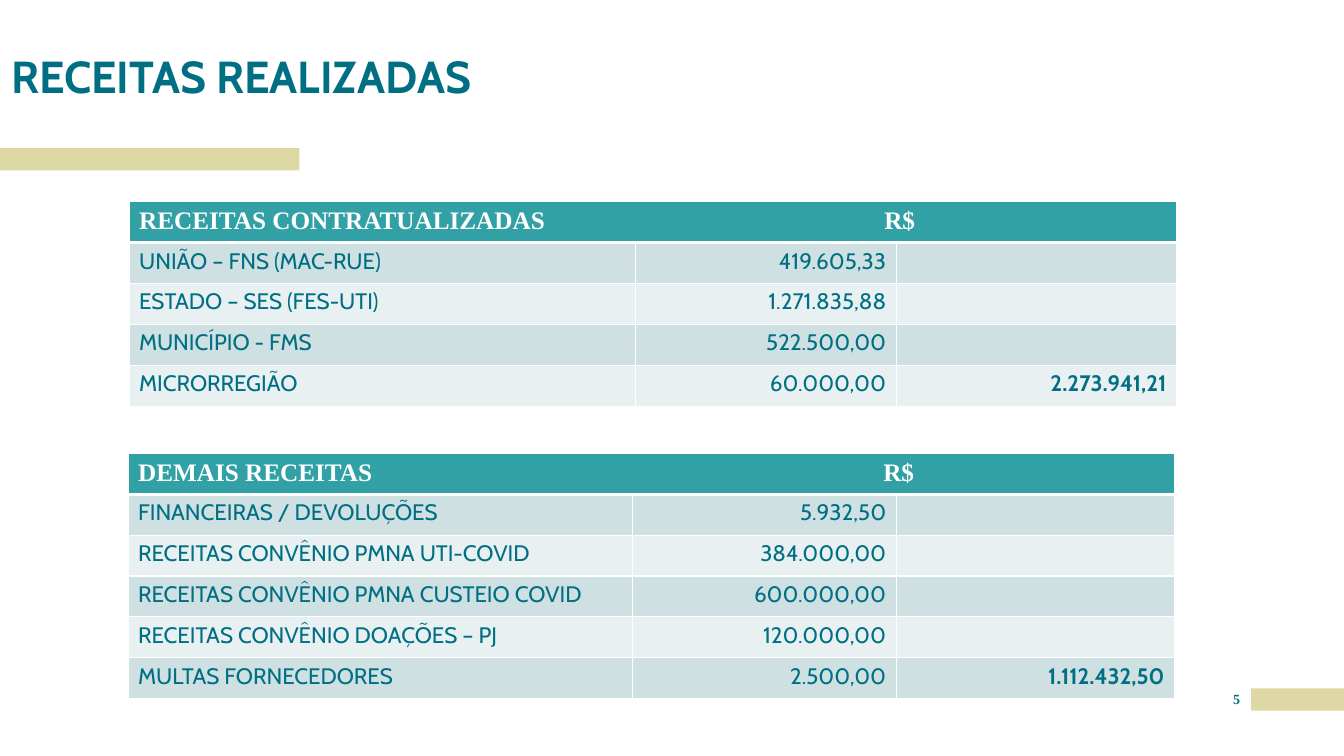
from dataclasses import dataclass

from lxml import etree
from pptx import Presentation
from pptx import util as u
from pptx.dml import color
from pptx.enum import shapes, text
from pptx.oxml import ns

COLORS = {
    "teal": "006F83",
    "header": "32A1A6",
    "odd_row": "CEE0E1",
    "even_row": "E8F0F1",
    "sand": "DED8A4",
    "white": "FFFFFF",
}
TITLE_FORMAT = {"name": "Cabin", "size": u.Pt(32), "bold": True}
HEADER_FORMAT = {"name": "Times New Roman", "size": u.Pt(18), "bold": True}
BODY_FORMAT = {"name": "Cabin", "size": u.Pt(16), "bold": False}
TOTAL_FORMAT = {**BODY_FORMAT, "bold": True}
NUMBER_FORMAT = {"name": "Times New Roman", "size": u.Pt(10), "bold": True}
NO_MARGINS = {f"margin_{side}": 0 for side in ("left", "top", "right", "bottom")}


@dataclass
class Bar:
    left: float
    top: float
    width: float
    height: float = 0.22


@dataclass
class RevenueTable:
    heading: str
    left: float
    top: float
    height: float
    column_widths: tuple[float, ...]
    revenues: list[tuple[str, str]]
    total: str


BARS = [Bar(12.41, 6.83, 0.92), Bar(0, 1.47, 2.97)]
TABLES = [
    RevenueTable(
        "RECEITAS CONTRATUALIZADAS", 1.28, 2, 2.03, (5.02, 2.59, 2.78),
        [
            ("UNIÃO – FNS (MAC-RUE)", "419.605,33"),
            ("ESTADO – SES (FES-UTI)", "1.271.835,88"),
            ("MUNICÍPIO - FMS", "522.500,00"),
            ("MICRORREGIÃO", "60.000,00"),
        ],
        "2.273.941,21",
    ),
    RevenueTable(
        "DEMAIS RECEITAS", 1.27, 4.5, 2.43, (5, 2.62, 2.76),
        [
            ("FINANCEIRAS / DEVOLUÇÕES", "5.932,50"),
            ("RECEITAS CONVÊNIO PMNA UTI-COVID", "384.000,00"),
            ("RECEITAS CONVÊNIO PMNA CUSTEIO COVID", "600.000,00"),
            ("RECEITAS CONVÊNIO DOAÇÕES – PJ", "120.000,00"),
            ("MULTAS FORNECEDORES", "2.500,00"),
        ],
        "1.112.432,50",
    ),
]


def set_attributes(target, values: dict) -> None:
    for name, value in values.items():
        setattr(target, name, value)


def rgb(name: str) -> color.RGBColor:
    return color.RGBColor.from_string(COLORS[name])


def write(paragraph, words: str, font_format: dict, color_name: str = "teal") -> None:
    run = paragraph.add_run()
    run.text = words
    set_attributes(run.font, font_format)
    run.font.color.rgb = rgb(color_name)


def add_bar(slide, bar: Bar) -> None:
    box = map(u.Inches, (bar.left, bar.top, bar.width, bar.height))
    shape = slide.shapes.add_shape(shapes.MSO_SHAPE.RECTANGLE, *box)
    shape.shadow.inherit = False
    shape.fill.solid()
    shape.fill.fore_color.rgb = rgb("sand")
    shape.line.fill.background()


def style_cell(cell, fill_name: str, bottom_width: int = 1) -> None:
    """Give the cell white borders and a solid fill; borders come first in the XML."""
    properties = cell._tc.get_or_add_tcPr()
    for side, width in {"L": 1, "R": 1, "T": 1, "B": bottom_width}.items():
        border = etree.SubElement(properties, ns.qn(f"a:ln{side}"), w=str(u.Pt(width)))
        fill = etree.SubElement(border, ns.qn("a:solidFill"))
        etree.SubElement(fill, ns.qn("a:srgbClr"), val=COLORS["white"])
    cell.fill.solid()
    cell.fill.fore_color.rgb = rgb(fill_name)


def add_tab_stop(paragraph, position: float) -> None:
    tab_list = etree.SubElement(paragraph._p.get_or_add_pPr(), ns.qn("a:tabLst"))
    etree.SubElement(tab_list, ns.qn("a:tab"), pos=str(u.Inches(position)), algn="l")


def add_revenue_table(slide, revenue_table: RevenueTable) -> None:
    widths = revenue_table.column_widths
    rows = [(*revenue, "") for revenue in revenue_table.revenues]
    rows[-1] = (*revenue_table.revenues[-1], revenue_table.total)
    box = (revenue_table.left, revenue_table.top, sum(widths), revenue_table.height)
    table = slide.shapes.add_table(
        len(rows) + 1, len(widths), *map(u.Inches, box)
    ).table
    for column, width in zip(table.columns, widths):
        column.width = u.Inches(width)

    for cell in table.rows[0].cells:
        style_cell(cell, "header", bottom_width=3)
    heading_cell = table.cell(0, 0)
    heading_cell.merge(table.cell(0, len(widths) - 1))
    heading = heading_cell.text_frame.paragraphs[0]
    add_tab_stop(heading, 7.39)
    write(heading, f"{revenue_table.heading}\tR$", HEADER_FORMAT, "white")

    for row_index, row in enumerate(rows, start=1):
        for column_index, words in enumerate(row):
            cell = table.cell(row_index, column_index)
            style_cell(cell, "odd_row" if row_index % 2 else "even_row")
            if not words:
                continue
            paragraph = cell.text_frame.paragraphs[0]
            if column_index:
                paragraph.alignment = text.PP_ALIGN.RIGHT
            write(paragraph, words, TOTAL_FORMAT if column_index == 2 else BODY_FORMAT)


def add_title(slide, words: str) -> None:
    title = slide.shapes.title
    set_attributes(title, {
        "left": u.Inches(0.11), "top": 0,
        "width": u.Inches(9.34), "height": u.Inches(1.02),
    })
    set_attributes(title.text_frame, {
        **NO_MARGINS, "vertical_anchor": text.MSO_ANCHOR.BOTTOM, "word_wrap": True,
    })
    paragraph = title.text_frame.paragraphs[0]
    set_attributes(paragraph, {"alignment": text.PP_ALIGN.LEFT, "line_spacing": 0.9})
    write(paragraph, words, TITLE_FORMAT)


def add_page_number(slide, number: str) -> None:
    box = slide.shapes.add_textbox(*map(u.Inches, (12.12, 6.85, 0.29, 0.25)))
    set_attributes(box.text_frame, {**NO_MARGINS, "word_wrap": True})
    paragraph = box.text_frame.paragraphs[0]
    paragraph.alignment = text.PP_ALIGN.CENTER
    write(paragraph, number, NUMBER_FORMAT)


def main() -> None:
    presentation = Presentation()
    presentation.slide_width = u.Inches(13.33)
    presentation.slide_height = u.Inches(7.5)
    slide = presentation.slides.add_slide(presentation.slide_layouts[5])
    for bar in BARS:
        add_bar(slide, bar)
    add_title(slide, "RECEITAS REALIZADAS")
    add_page_number(slide, "5")
    for revenue_table in TABLES:
        add_revenue_table(slide, revenue_table)
    presentation.save("out.pptx")


if __name__ == "__main__":
    main()
